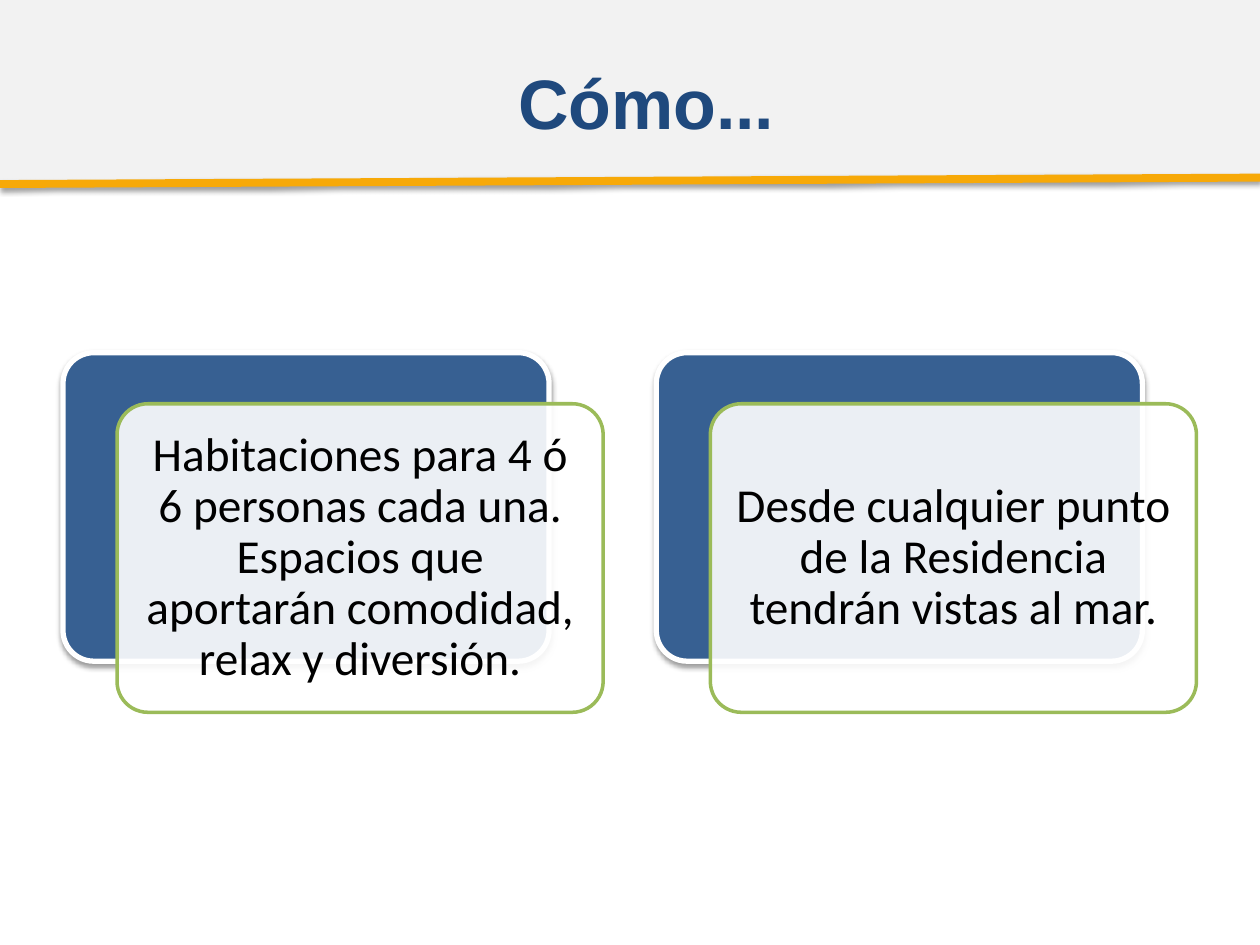
from lxml import etree
from pptx import Presentation
from pptx.dml.color import RGBColor
from pptx.enum.shapes import MSO_CONNECTOR, MSO_SHAPE
from pptx.enum.text import MSO_ANCHOR, PP_ALIGN
from pptx.oxml import parse_xml
from pptx.oxml.ns import qn
from pptx.util import Cm, Pt

ROUNDED = MSO_SHAPE.ROUNDED_RECTANGLE
RECTANGLE = MSO_SHAPE.RECTANGLE
STRAIGHT = MSO_CONNECTOR.STRAIGHT
MIDDLE = MSO_ANCHOR.MIDDLE
CENTER = PP_ALIGN.CENTER

SLIDE_WIDTH, SLIDE_HEIGHT = 25.4, 19.05
CARD_WIDTH, CARD_HEIGHT = 9.8, 6.22
CARD_SHIFT_X, CARD_SHIFT_Y = 1.09, 1.03
CARDS_LEFT, CARDS_TOP, CARD_PITCH = 1.27, 7.11, 11.96
MESSAGES = [
    "Habitaciones para 4 ó 6 personas cada una. Espacios que aportarán "
    "comodidad, relax y diversión.",
    "Desde cualquier punto de la Residencia tendrán vistas al mar.",
]
SHADOW_XML = (
    '<a:effectLst xmlns:a="http://schemas.openxmlformats.org/drawingml/2006/main">'
    '<a:outerShdw blurRad="40000" dist="20000" dir="5400000" rotWithShape="0">'
    '<a:srgbClr val="000000"><a:alpha val="38000"/></a:srgbClr>'
    "</a:outerShdw></a:effectLst>"
)


def color(value):
    """Return the colour for a hex string."""
    return RGBColor.from_string(value)


def add_shadow(shape):
    """Put a soft shadow below a shape whose fill and line are already set."""
    shape._element.spPr.append(parse_xml(SHADOW_XML))


def add_run(paragraph, text, font_name, size, hex_color, bold=False):
    """Add one formatted run to a centred paragraph."""
    paragraph.alignment = CENTER
    run = paragraph.add_run()
    run.text = text
    run.font.name, run.font.size, run.font.bold = font_name, Pt(size), bold
    run.font.color.rgb = color(hex_color)


def add_panel(slide, left, top, fill, line, line_width):
    """Add one rounded panel of the card size."""
    panel = slide.shapes.add_shape(
        ROUNDED, Cm(left), Cm(top), Cm(CARD_WIDTH), Cm(CARD_HEIGHT))
    panel.adjustments[0] = 0.1
    panel.fill.solid()
    panel.fill.fore_color.rgb = color(fill)
    panel.line.color.rgb = color(line)
    panel.line.width = Pt(line_width)
    return panel


def add_card(slide, left, top, message):
    """Add a blue panel with a translucent message panel shifted over it."""
    add_shadow(add_panel(slide, left, top, "376092", "FFFFFF", 3))

    front = add_panel(slide, left + CARD_SHIFT_X, top + CARD_SHIFT_Y,
                      "FFFFFF", "9BBB59", 2)
    front.shadow.inherit = False
    fill_color = front._element.spPr.find(qn("a:solidFill")).find(qn("a:srgbClr"))
    etree.SubElement(fill_color, qn("a:alpha")).set("val", "90000")

    frame = front.text_frame
    frame.word_wrap = True
    frame.vertical_anchor = MIDDLE
    frame.margin_left = frame.margin_right = Cm(0.28)
    frame.margin_top = frame.margin_bottom = Cm(0.28)
    frame.paragraphs[0].line_spacing = 0.9
    add_run(frame.paragraphs[0], message, "Calibri", 27, "000000")


def add_header(slide, left, top, width, height, heading):
    """Add the grey band, its slanted orange rule and the slide title."""
    band = slide.shapes.add_shape(
        RECTANGLE, Cm(left), Cm(top), Cm(width), Cm(height))
    band.fill.solid()
    band.fill.fore_color.rgb = color("F2F2F2")
    band.line.fill.background()
    band.shadow.inherit = False

    rule = slide.shapes.add_connector(
        STRAIGHT, Cm(left), Cm(top + height + 0.08),
        Cm(left + width), Cm(top + height - 0.05))
    rule.line.color.rgb = color("F7A908")
    rule.line.width = Pt(4.5)
    add_shadow(rule)

    title = slide.shapes.title
    rule._element.addnext(title._element)
    title.left, title.top = Cm(left + 1.6), Cm(top + 0.46)
    title.width, title.height = Cm(22.86), Cm(height - 0.46)
    title.text_frame.vertical_anchor = MIDDLE
    add_run(title.text_frame.paragraphs[0], heading, "Arial", 40, "1F497D", True)


def main():
    """Build and save the slide."""
    presentation = Presentation()
    presentation.slide_width = Cm(SLIDE_WIDTH)
    presentation.slide_height = Cm(SLIDE_HEIGHT)
    slide = presentation.slides.add_slide(
        presentation.slide_layouts.get_by_name("Title Only"))
    add_header(slide, 0, 0, SLIDE_WIDTH, 3.63, "Cómo...")
    for index, message in enumerate(MESSAGES):
        add_card(slide, CARDS_LEFT + index * CARD_PITCH, CARDS_TOP, message)
    presentation.save("out.pptx")


if __name__ == "__main__":
    main()
